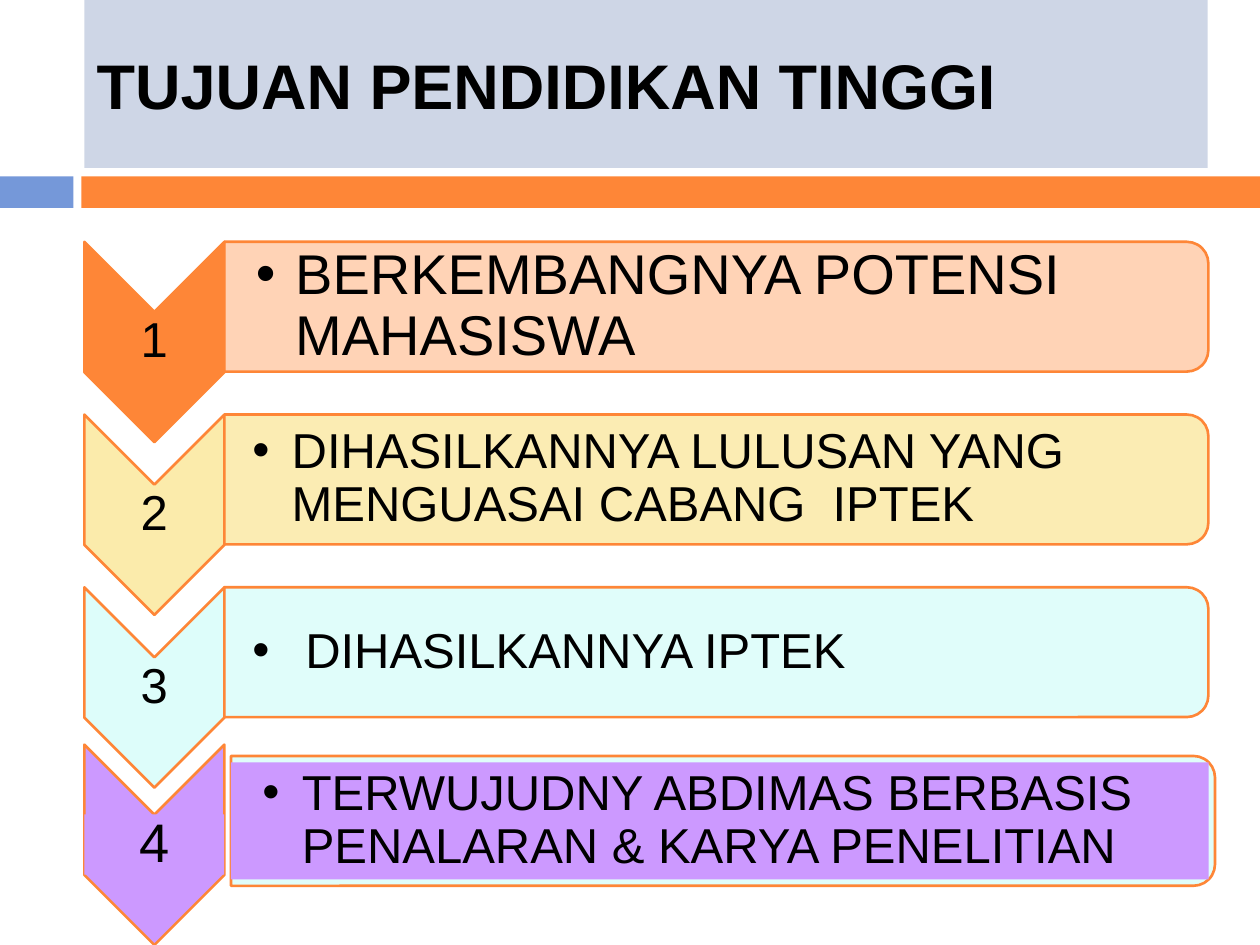
from lxml import etree
from pptx import Presentation
from pptx.dml.color import RGBColor
from pptx.enum.shapes import MSO_SHAPE
from pptx.enum.text import MSO_ANCHOR, PP_ALIGN
from pptx.oxml.ns import qn
from pptx.util import Pt

ORANGE = "FE8637"
LEFT, TOP, PITCH = 48.2, 138.2, 98.7
CHEV_W, CHEV_H = 80, 114.5
BAR_W, BAR_H = 562.3, 74.2

# label, label size, text, text size, left inset, chevron fill, bar fill
ROWS = [
    ("1", 28, "BERKEMBANGNYA POTENSI MAHASISWA", 32, 18, ORANGE, "FFCFAF"),
    ("2", 28, "DIHASILKANNYA LULUSAN YANG MENGUASAI CABANG  IPTEK", 28, 16,
     "FBEBAB", "FBEBAB"),
    ("3", 28, " DIHASILKANNYA IPTEK", 28, 16, "DDFDFA", "DDFDFA"),
    ("4", 31, "TERWUJUDNY ABDIMAS BERBASIS PENALARAN & KARYA PENELITIAN", 28, 18,
     "CC99FF", "DDFDFA"),
]


def color(code):
    return RGBColor.from_string(code)


def add_box(slide, x, y, w, h, fill=None, line=None, kind=MSO_SHAPE.RECTANGLE):
    box = slide.shapes.add_shape(kind, Pt(x), Pt(y), Pt(w), Pt(h))
    box.shadow.inherit = False
    if fill:
        box.fill.solid()
        box.fill.fore_color.rgb = color(fill)
    else:
        box.fill.background()
    if line:
        box.line.color.rgb = color(line)
        box.line.width = Pt(1.5)
    else:
        box.line.fill.background()
    return box


def add_turned(slide, kind, x, y, w, h, fill):
    """Add a shape turned by 90 degrees that covers the given area."""
    shift = (w - h) / 2
    box = add_box(slide, x + shift, y - shift, h, w, fill, ORANGE, kind)
    box.rotation = 90
    return box


def set_alpha(box, part):
    tint = box.fill._xPr.find(qn("a:solidFill"))[0]
    etree.SubElement(tint, qn("a:alpha"), val=str(part * 1000))


def put_text(box, text, size, bold=False, align=PP_ALIGN.LEFT, space=1.0,
             inset=None, bullet=False):
    frame = box.text_frame
    frame.word_wrap = True
    frame.vertical_anchor = MSO_ANCHOR.MIDDLE
    if inset is not None:
        frame.margin_left = Pt(inset)
        frame.margin_top = frame.margin_right = frame.margin_bottom = Pt(1.4)
    para = frame.paragraphs[0]
    para.alignment = align
    para.line_spacing = space
    run = para.add_run()
    run.text = text
    font = run.font
    font.name, font.size, font.bold = "Arial", Pt(size), bold
    font.color.rgb = color("000000")
    if bullet:
        props = para._p.get_or_add_pPr()
        props.set("marL", str(Pt(22.5)))
        props.set("indent", str(-Pt(22.5)))
        etree.SubElement(props, qn("a:buFont"), typeface="Arial")
        etree.SubElement(props, qn("a:buChar"), char="•")


def add_row(slide, top, row, bar_x, bar_y, fill=None):
    label, size, text, text_size, inset, chev, bar = row
    add_turned(slide, MSO_SHAPE.CHEVRON, LEFT, top, CHEV_W, CHEV_H, chev)
    mark = add_box(slide, LEFT, top + 39.8, CHEV_W, 34.5, fill)
    put_text(mark, label, size, align=PP_ALIGN.CENTER, space=0.9, inset=1.4)
    panel = add_turned(slide, MSO_SHAPE.ROUND_2_SAME_RECTANGLE,
                       bar_x, bar_y, BAR_W, BAR_H, bar)
    set_alpha(panel, 90)
    body = add_box(slide, bar_x, bar_y + 3.6, 558.7, 67, fill)
    put_text(body, text, text_size, space=0.9, inset=inset, bullet=True)


def main():
    deck = Presentation()
    deck.slide_width, deck.slide_height = Pt(720), Pt(540)
    slide = deck.slides.add_slide(deck.slide_layouts[6])
    add_box(slide, 0, 100.8, 42, 18, "7598D9")
    add_box(slide, 46.5, 100.8, 673.5, 18, ORANGE)
    title = add_box(slide, LEFT, 0, 642, 96, "CED6E6")
    put_text(title, "TUJUAN PENDIDIKAN TINGGI", 36, bold=True)
    bar_x = LEFT + CHEV_W
    for i, row in enumerate(ROWS[:3]):
        top = TOP + i * PITCH
        add_row(slide, top, row, bar_x, top)
    add_row(slide, 425.5, ROWS[3], bar_x + 3.8, 432, "CC99FF")
    deck.save("out.pptx")


if __name__ == "__main__":
    main()
